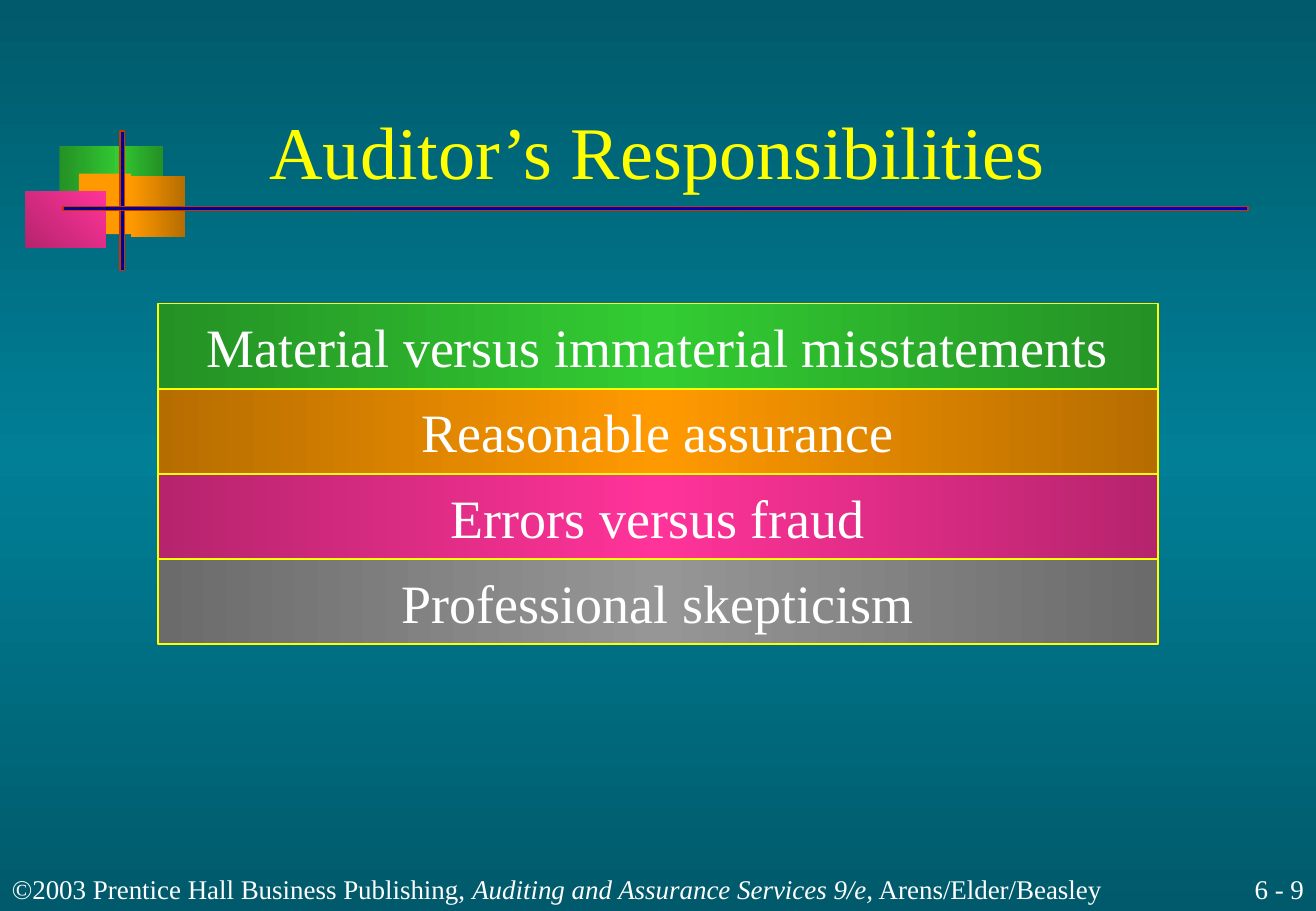
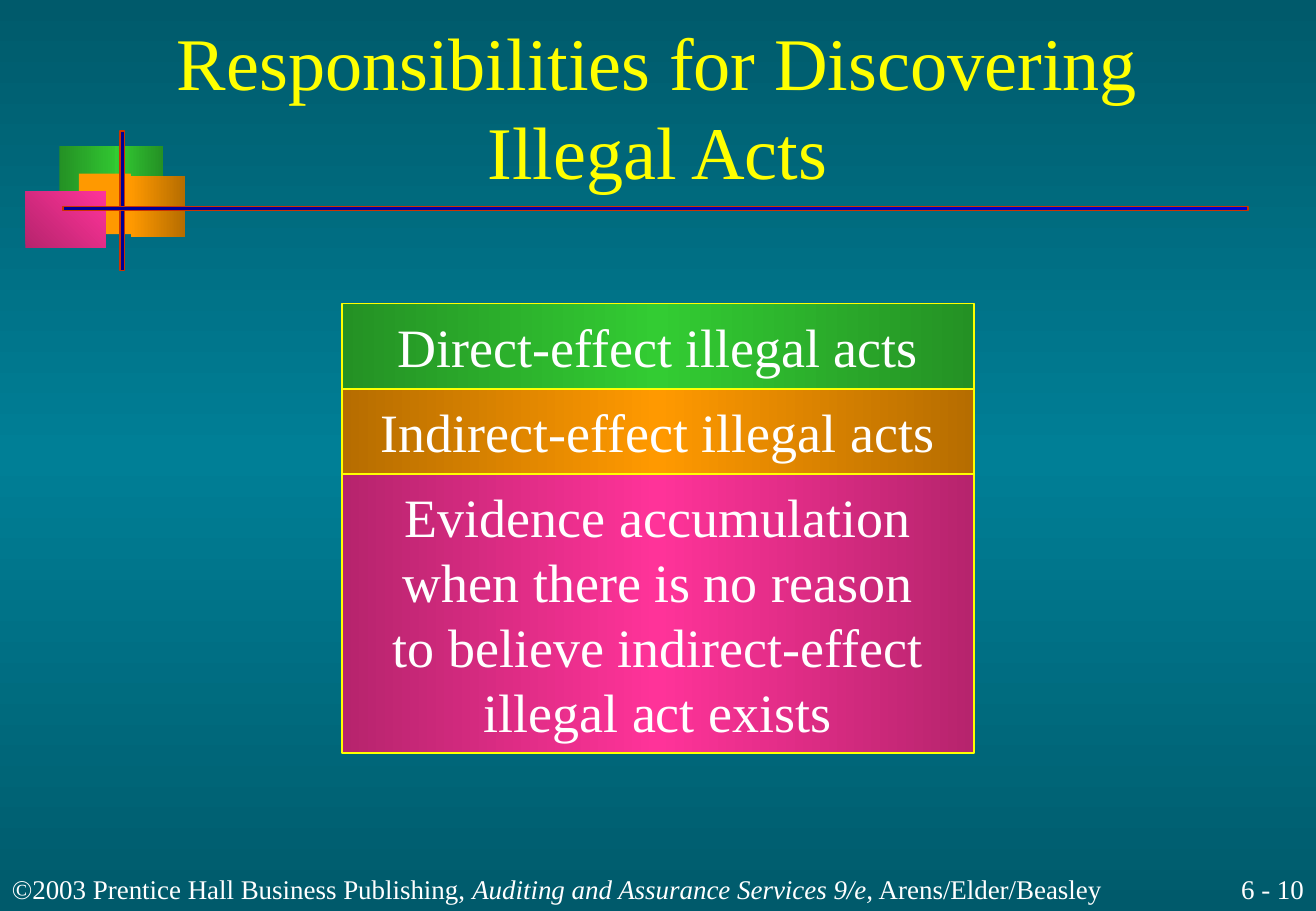
"""Build two slides on the auditor's responsibilities, with stacked gradient bars."""
import pptx
import pptx.dml.color
import pptx.enum.shapes
import pptx.enum.text
import pptx.oxml.ns
import pptx.util
from lxml import etree

Cm = pptx.util.Cm
Pt = pptx.util.Pt
RGB = pptx.dml.color.RGBColor.from_string
qn = pptx.oxml.ns.qn
ALIGN = pptx.enum.text.PP_ALIGN
ANCHOR = pptx.enum.text.MSO_ANCHOR
RECTANGLE = pptx.enum.shapes.MSO_SHAPE.RECTANGLE

THEME = {
    "font": "Times New Roman",
    "sizes": {"title": Pt(44), "bar": Pt(32), "footer": Pt(16)},
    "yellow": "FFFF00",
    "white": "FFFFFF",
    "red": "CC3300",
    "teal": "007F96",
    "green": "33CC33",
    "orange": "FF9900",
    "pink": "FF3399",
    "grey": "969696",
    "navy": "000094",
    "blue": "0000CC",
    "shade": "46275",
}
WIDTH, HEIGHT = 27.51, 19.05
BAR_TOP, BAR_HEIGHT, LINE_STEP = 6.35, 1.78, 1.353
FOOTER_TOP, FOOTER_HEIGHT = 17.78, 1.27

SLIDES = [
    {
        "title": "Auditor’s Responsibilities",
        "number": "6 - 9",
        "width": 20.9,
        "bars": [
            "Material versus immaterial misstatements",
            "Reasonable assurance",
            "Errors versus fraud",
            "Professional skepticism",
        ],
    },
    {
        "title": "Responsibilities for Discovering Illegal Acts",
        "number": "6 - 10",
        "width": 13.21,
        "bars": [
            "Direct-effect illegal acts",
            "Indirect-effect illegal acts",
            "Evidence accumulation\nwhen there is no reason\n"
            "to believe indirect-effect\nillegal act exists",
        ],
    },
]

# (left, top, width, height), colour stops, angle, outlined
ORNAMENTS = [
    ((1.24, 3.05, 1.32, 1.32), ["dark green", "green"], 0, False),
    ((2.41, 3.05, 0.99, 1.32), ["green", "dark green"], 0, False),
    ((1.65, 3.63, 1.09, 1.27), ["orange"], 0, False),
    ((2.74, 3.68, 1.12, 1.27), ["orange", "dark orange"], 0, False),
    ((0.53, 4.01, 1.68, 1.17), ["dark pink", "pink"], 45, False),
    ((2.51, 2.74, 0.1, 2.92), ["navy"], 0, True),
    ((1.32, 4.32, 24.77, 0.08), ["navy", "blue"], 0, True),
]


def paint(fill, element, stops, angle=0):
    if len(stops) == 1:
        fill.solid()
        fill.fore_color.rgb = RGB(THEME[stops[0]])
        return
    fill.gradient()
    fill.gradient_angle = angle
    stop_list = element.find(".//" + qn("a:gsLst"))
    stop_list.clear()
    for index, stop in enumerate(stops):
        position = str(100000 * index // (len(stops) - 1))
        mark = etree.SubElement(stop_list, qn("a:gs"), pos=position)
        colour = etree.SubElement(mark, qn("a:srgbClr"), val=THEME[stop.split()[-1]])
        if stop.startswith("dark "):
            etree.SubElement(colour, qn("a:shade"), val=THEME["shade"])


def write(box, text, role, colour, align, anchor, wrap=True):
    frame = box.text_frame
    frame.text = text
    frame_format = {
        "auto_size": pptx.enum.text.MSO_AUTO_SIZE.NONE,
        "word_wrap": wrap,
        "vertical_anchor": anchor,
    }
    for name, value in frame_format.items():
        setattr(frame, name, value)
    for para in frame.paragraphs:
        para.alignment = align
        for span in para.runs:
            for name, value in {"name": THEME["font"], "size": THEME["sizes"][role]}.items():
                setattr(span.font, name, value)
            span.font.color.rgb = RGB(THEME[colour])


deck = pptx.Presentation()
deck.slide_width, deck.slide_height = Cm(WIDTH), Cm(HEIGHT)
layout = deck.slide_layouts.get_by_name("Title Only")
paint(layout.background.fill, layout._element, ["dark teal", "teal", "dark teal"], 270)
for holder in list(layout.placeholders):
    if holder.placeholder_format.idx:
        holder._element.getparent().remove(holder._element)
title_place = {"left": Cm(2.74), "top": Cm(1.02), "width": Cm(22.02), "height": Cm(3.18)}
for name, value in title_place.items():
    setattr(layout.placeholders[0], name, value)

pages = [deck.slides.add_slide(layout) for _ in SLIDES]

shared = []
for place, stops, angle, outlined in ORNAMENTS:
    ornament = pages[0].shapes.add_shape(RECTANGLE, *map(Cm, place))
    ornament.shadow.inherit = False
    paint(ornament.fill, ornament._element, stops, angle)
    if outlined:
        ornament.line.color.rgb = RGB(THEME["red"])
        ornament.line.width = Pt(0.75)
    else:
        ornament.line.fill.background()
    shared.append(ornament)

footer = pages[0].shapes.add_textbox(Cm(0), Cm(FOOTER_TOP), Cm(25.32), Cm(FOOTER_HEIGHT))
para = footer.text_frame.paragraphs[0]
for text, italic in [
    ("©2003 Prentice Hall Business Publishing, ", False),
    ("Auditing and Assurance Services 9/e,", True),
    (" Arens/Elder/Beasley", False),
]:
    span = para.add_run()
    span.text = text
    span_format = {"name": THEME["font"], "size": THEME["sizes"]["footer"], "italic": italic}
    for name, value in span_format.items():
        setattr(span.font, name, value)
    span.font.color.rgb = RGB(THEME["white"])
footer.text_frame.word_wrap = True
footer.text_frame.vertical_anchor = ANCHOR.BOTTOM
shared.append(footer)
for shape in shared:
    layout.shapes._spTree.append(shape._element)

for page, content in zip(pages, SLIDES):
    write(page.shapes.title, content["title"], "title", "yellow", ALIGN.CENTER, ANCHOR.BOTTOM)
    number = page.shapes.add_textbox(
        Cm(24.77), Cm(FOOTER_TOP), Cm(2.74), Cm(FOOTER_HEIGHT))
    write(number, content["number"], "footer", "white", ALIGN.RIGHT, ANCHOR.BOTTOM)

    left, top = (WIDTH - content["width"]) / 2, BAR_TOP
    for text, colour in zip(content["bars"], ["green", "orange", "pink", "grey"]):
        height = BAR_HEIGHT + LINE_STEP * text.count("\n")
        bar = page.shapes.add_shape(
            RECTANGLE, Cm(left), Cm(top), Cm(content["width"]), Cm(height))
        bar.shadow.inherit = False
        paint(bar.fill, bar._element, ["dark " + colour, colour, "dark " + colour])
        bar.line.color.rgb = RGB(THEME["yellow"])
        bar.line.width = Pt(1)
        write(bar, text, "bar", "white", ALIGN.CENTER, ANCHOR.MIDDLE, wrap=False)
        top += height

deck.save("out.pptx")
